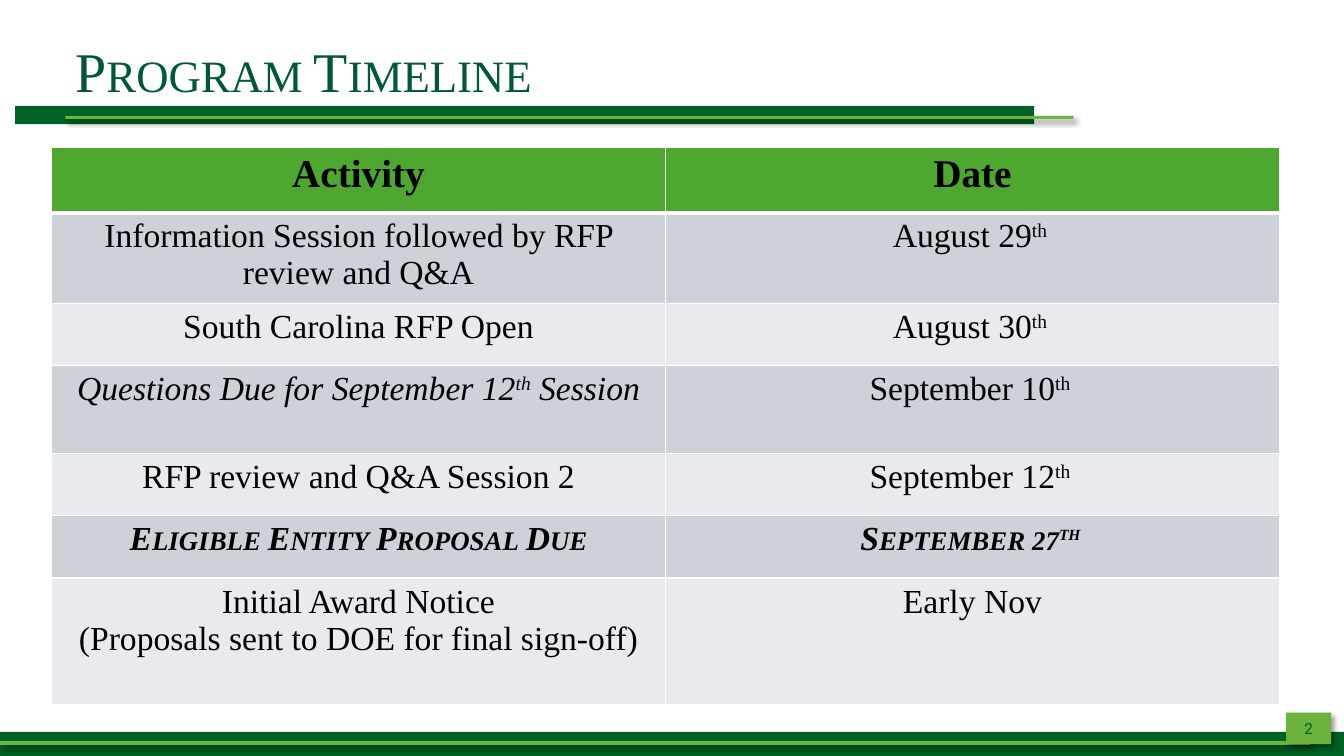
from lxml.etree import SubElement
from pptx import Presentation
from pptx.dml.color import RGBColor as RGB
from pptx.enum.shapes import MSO_SHAPE as SHAPE
from pptx.enum.text import MSO_ANCHOR as ANCHOR, PP_ALIGN as ALIGN
from pptx.oxml.ns import qn
from pptx.util import Cm, Pt

HUES = {"dark": "006224", "lime": "6CB33E", "title": "005739", "head": "4EA72E",
        "odd": "CCD2D8", "even": "E8EAED", "ink": "000000", "white": "FFFFFF"}
SERIF = "Times New Roman"
BARS = [
    (0, 18.44, 33.87, 0.61, "dark"),
    (0.38, 2.67, 25.68, 0.46, "dark"),
    (1.65, 2.92, 25.4, 0.08, "lime"),
    (0, 18.67, 33.02, 0.1, "lime"),
    (32.41, 17.96, 1.14, 0.79, "lime"),
]
PAGE = "2"
TITLE = "Program Timeline"
HEAD = {"size": 28, "bold": True}
DUE = {"bold": True, "italic": True, "small": True}
ROWS = [
    (1.65, "Activity", "Date", HEAD, HEAD),
    (2.21, "Information Session followed by RFP review and Q&A", "August 29^th ", {}, {}),
    (1.57, "South Carolina RFP Open", "August 30^th ", {}, {}),
    (2.21, "Questions Due for September 12^th^ Session", "September 10^th ",
     {"italic": True}, {}),
    (1.57, "RFP review and Q&A Session 2", "September 12^th ", {}, {}),
    (1.57, "Eligible Entity Proposal Due", "September 27^th ", DUE, DUE),
    (3.18, "Initial Award Notice\n(Proposals sent to DOE for final sign-off)",
     "Early Nov", {}, {}),
]
LEFT, TOP, WIDE = 1.3, 3.71, 15.47


def write(frame, text, size=24, hue="ink", font=SERIF, bold=False, italic=False,
          small=False, align=ALIGN.CENTER, space=None):
    """Fill a frame; text after every odd caret is raised."""
    for num, line in enumerate(text.split("\n")):
        para = frame.add_paragraph() if num else frame.paragraphs[0]
        para.alignment = align
        para.line_spacing = space
        for part, words in enumerate(line.split("^")):
            run = para.add_run()
            run.text = words
            face = run.font
            face.size, face.name = Pt(size), font
            face.bold, face.italic = bold, italic
            face.color.rgb = RGB.from_string(HUES[hue])
            props = run._r.get_or_add_rPr()
            if part % 2:
                props.set("baseline", "30000")
            if small:
                props.set("cap", "small")


def shade(shape):
    """Add a soft shadow to the lower right."""
    glow = SubElement(shape._element.spPr.find(qn("a:effectLst")), qn("a:outerShdw"),
                      blurRad=str(Pt(4)), dist=str(Pt(3)), dir="2700000",
                      algn="tl", rotWithShape="0")
    tint = SubElement(glow, qn("a:srgbClr"), val=HUES["ink"])
    SubElement(tint, qn("a:alpha"), val="40000")


def edge(cell, row):
    """Draw white borders, thick under the header."""
    props = cell._tc.get_or_add_tcPr()
    for side in "LRTB":
        thick = (row, side) in [(0, "B"), (1, "T")]
        line = SubElement(props, qn("a:ln" + side), w=str(Pt(3 if thick else 1)))
        fill = SubElement(line, qn("a:solidFill"))
        SubElement(fill, qn("a:srgbClr"), val=HUES["white"])


def main():
    """Build the slide and save it."""
    deck = Presentation()
    deck.slide_width, deck.slide_height = Cm(33.87), Cm(19.05)
    slide = deck.slides.add_slide(deck.slide_layouts[6])
    shapes = slide.shapes

    for *box, hue in BARS:
        bar = shapes.add_shape(SHAPE.RECTANGLE, *map(Cm, box))
        bar.shadow.inherit = False
        bar.fill.solid()
        bar.fill.fore_color.rgb = RGB.from_string(HUES[hue])
        bar.line.fill.background()
        if hue == "lime":
            shade(bar)
    bar.text_frame.vertical_anchor = ANCHOR.MIDDLE
    write(bar.text_frame, PAGE, size=11, hue="dark", font="Roboto")

    title = shapes.add_textbox(Cm(1.65), Cm(0.46), Cm(21.92), Cm(2.84)).text_frame
    title.word_wrap = True
    title.vertical_anchor = ANCHOR.MIDDLE
    write(title, TITLE, size=40, hue="title", small=True, align=ALIGN.LEFT, space=0.9)

    tall = sum(row[0] for row in ROWS)
    table = shapes.add_table(len(ROWS), 2, Cm(LEFT), Cm(TOP), Cm(2 * WIDE), Cm(tall)).table
    for col in table.columns:
        col.width = Cm(WIDE)
    for row, (high, task, date, *looks) in enumerate(ROWS):
        table.rows[row].height = Cm(high)
        hue = "head" if row == 0 else "odd" if row % 2 else "even"
        for col, (text, look) in enumerate(zip((task, date), looks)):
            cell = table.cell(row, col)
            edge(cell, row)
            cell.fill.solid()
            cell.fill.fore_color.rgb = RGB.from_string(HUES[hue])
            write(cell.text_frame, text, **look)

    deck.save("out.pptx")


if __name__ == "__main__":
    main()
